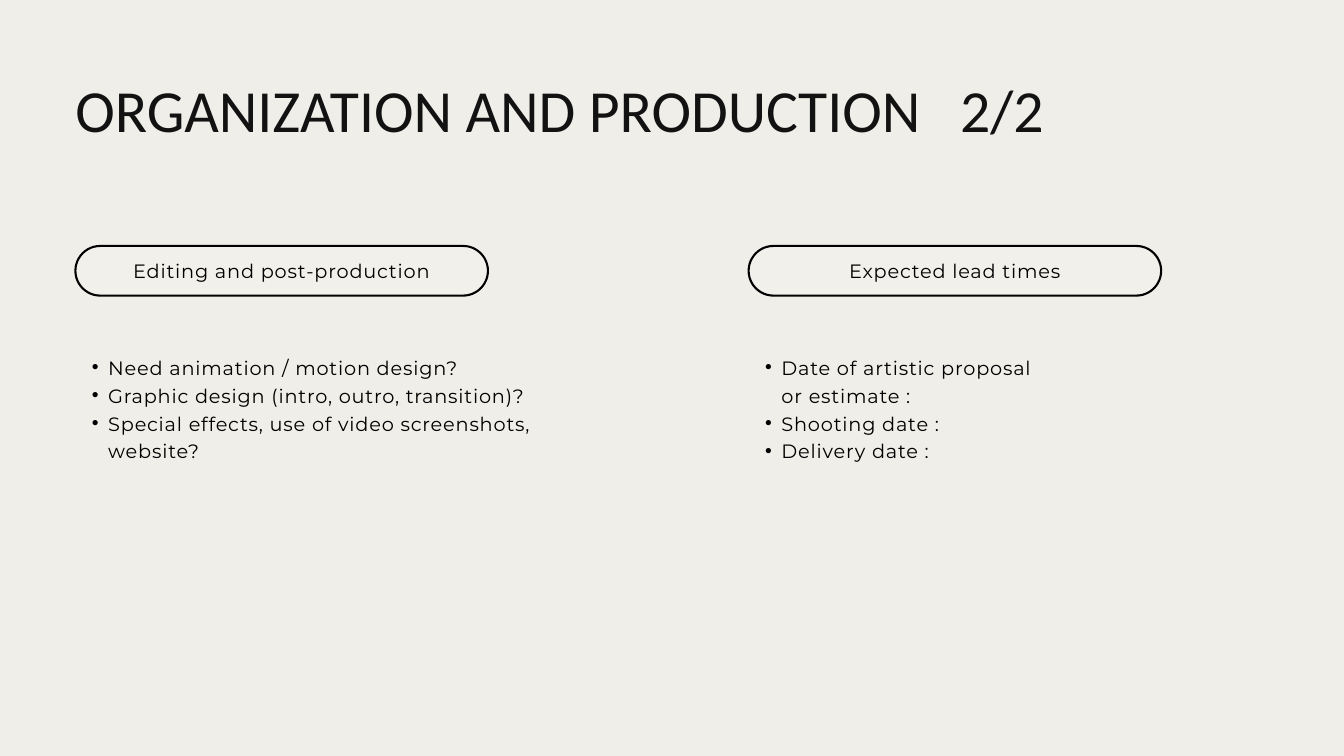
from lxml.etree import SubElement
from pptx import Presentation
from pptx.dml.color import RGBColor
from pptx.enum.shapes import MSO_SHAPE
from pptx.enum.text import MSO_ANCHOR, PP_ALIGN
from pptx.oxml.ns import qn
from pptx.util import Pt

TITLE = "ORGANIZATION AND PRODUCTION\t2/2"
COLUMNS = [
    ("Editing and post-production", 515, [
        "Need animation / motion design?",
        "Graphic design (intro, outro, transition)?",
        "Special effects, use of video screenshots, website?",
    ]),
    ("Expected lead times", 324, [
        "Date of artistic proposal or estimate :",
        "Shooting date :",
        "Delivery date :",
    ]),
]

PAPER = RGBColor(0xEF, 0xEE, 0xE8)
PILL = RGBColor(0xF1, 0xF0, 0xEA)
INK = RGBColor(0x12, 0x12, 0x12)
BLACK = RGBColor(0, 0, 0)

LEFT, STEP = 80.8, 721.3
PILL_TOP, PILL_W, PILL_H = 263.5, 442, 53.2
LIST_TOP, LIST_H = 376, 119
INDENT, HANG = 35.2, 17.6


def write(shape, lines, size=20.7, font="Montserrat", color=BLACK, lead=30,
          track=0.9, align=PP_ALIGN.LEFT, anchor=MSO_ANCHOR.TOP,
          inset=(0, 0, 0, 0), bullet=False, tab=None):
    frame = shape.text_frame
    frame.word_wrap = True
    frame.vertical_anchor = anchor
    (frame.margin_left, frame.margin_top,
     frame.margin_right, frame.margin_bottom) = map(Pt, inset)
    for i, line in enumerate(lines):
        para = frame.add_paragraph() if i else frame.paragraphs[0]
        para.alignment = align
        para.line_spacing = Pt(lead)
        props = para._p.get_or_add_pPr()
        if bullet:
            props.set("marL", str(Pt(INDENT)))
            props.set("indent", str(-Pt(HANG)))
            SubElement(props, qn("a:buFont"), typeface="Arial")
            SubElement(props, qn("a:buChar"), char="•")
        if tab:
            stops = SubElement(props, qn("a:tabLst"))
            SubElement(stops, qn("a:tab"), pos=str(Pt(tab)), algn="l")
        run = para.add_run()
        run.text = line
        run.font.size = Pt(size)
        run.font.name = font
        run.font.color.rgb = color
        if track:
            run._r.get_or_add_rPr().set("spc", str(round(track * 100)))


def add_box(slide, *place):
    return slide.shapes.add_textbox(*map(Pt, place))


def add_pill(slide, left, label):
    pill = slide.shapes.add_shape(
        MSO_SHAPE.ROUNDED_RECTANGLE,
        *map(Pt, (left, PILL_TOP, PILL_W, PILL_H)))
    pill.adjustments[0] = 0.5
    pill.shadow.inherit = False
    pill.fill.solid()
    pill.fill.fore_color.rgb = PILL
    pill.line.color.rgb = BLACK
    pill.line.width = Pt(2.25)
    write(pill, [label], align=PP_ALIGN.CENTER, anchor=MSO_ANCHOR.MIDDLE,
          inset=(4, 0, 4, 5.8))


def main():
    deck = Presentation()
    deck.slide_width, deck.slide_height = Pt(1440), Pt(810)
    slide = deck.slides.add_slide(deck.slide_layouts[6])
    back = slide.background.fill
    back.solid()
    back.fore_color.rgb = PAPER

    write(add_box(slide, LEFT, 90.7, 1278, 67), [TITLE], size=64,
          font="Calibri", color=INK, lead=64, track=0, tab=948)
    for i, (label, width, items) in enumerate(COLUMNS):
        left = LEFT + i * STEP
        add_pill(slide, left, label)
        write(add_box(slide, left, LIST_TOP, width, LIST_H), items, bullet=True)
    deck.save("out.pptx")


if __name__ == "__main__":
    main()
